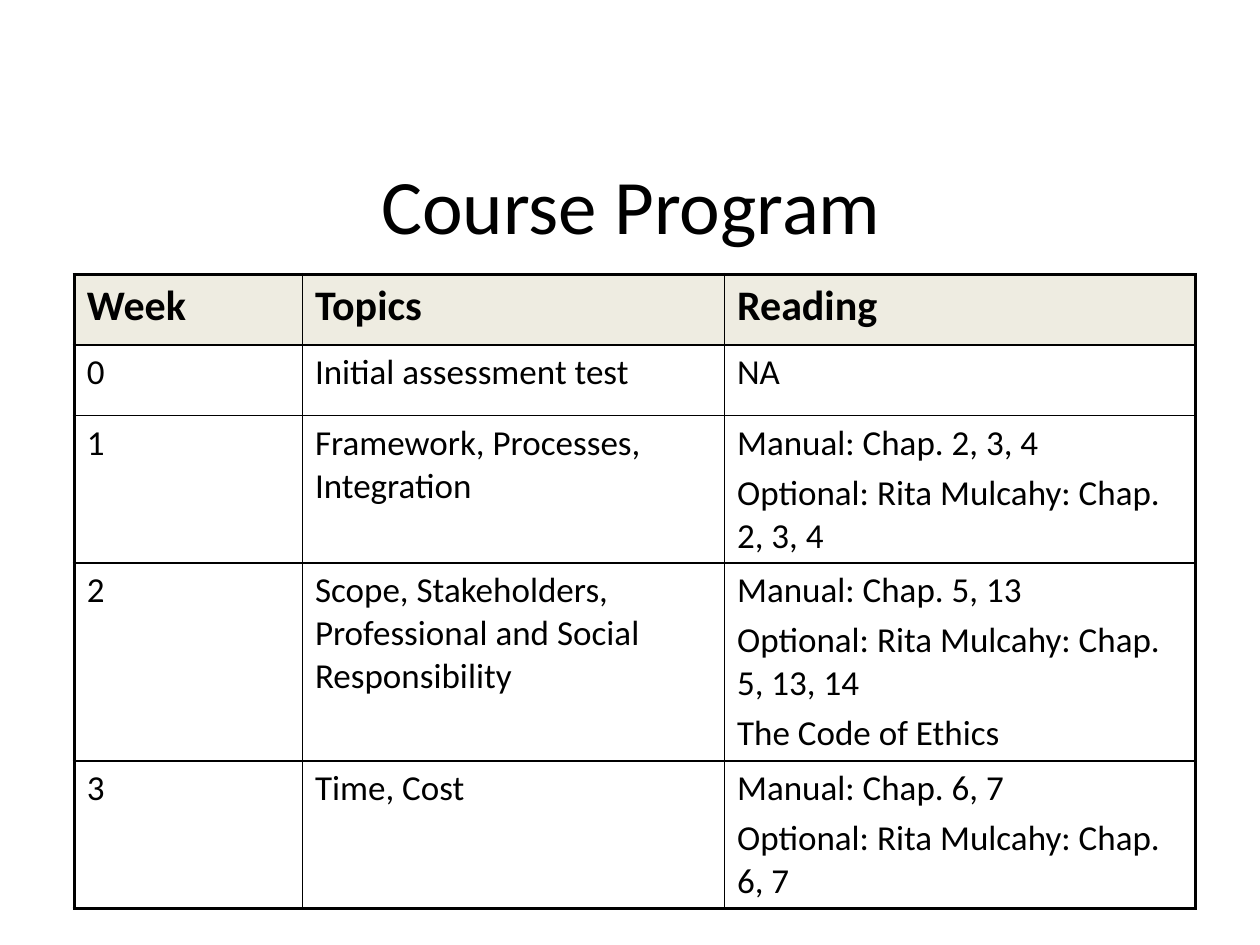
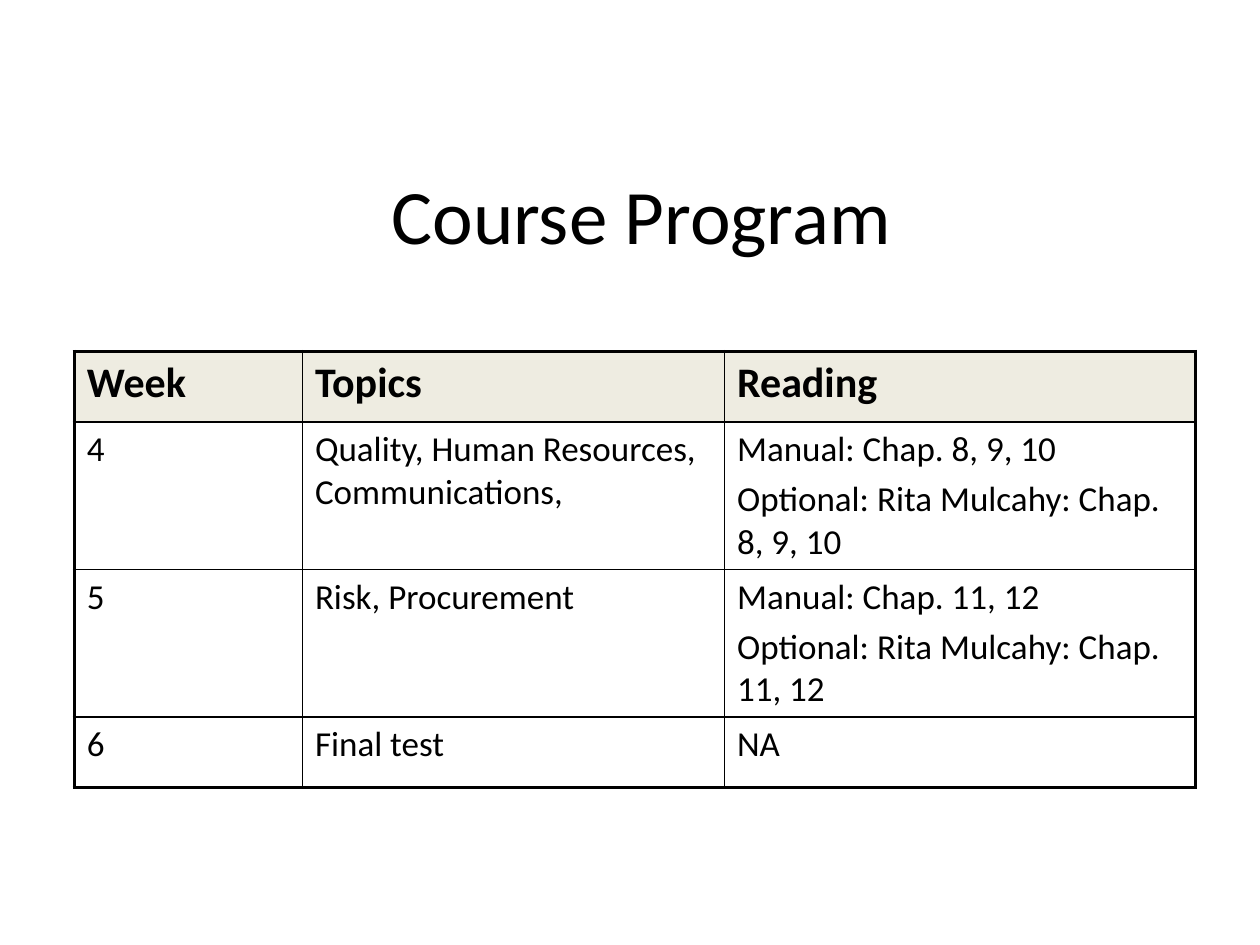
from dataclasses import dataclass

from lxml.etree import SubElement
from pptx import Presentation
from pptx.dml.color import RGBColor
from pptx.enum.text import MSO_ANCHOR as Anchor, PP_ALIGN as Align
from pptx.oxml.ns import qn
from pptx.presentation import Presentation as Deck
from pptx.slide import Slide
from pptx.table import _Cell as Cell
from pptx.text.text import _Paragraph as Paragraph
from pptx.util import Inches, Pt

FONT = "Calibri"
INK = "000000"
HEADER_FILL = "EEECE1"
THIN, THICK = 1, 2.25
TABLE_LEFT = 0.59
COLUMN_WIDTHS = (1.81, 3.35, 3.74)
HEADINGS = ("Week", "Topics", "Reading")
ROW_HEIGHTS = {1: 0.56, 2: 1.17, 3: 1.57}


@dataclass(frozen=True)
class Week:
    number: int
    topics: str
    readings: tuple[str, ...]


@dataclass(frozen=True)
class ProgramSlide:
    title_left: float
    title_top: float
    table_top: float
    weeks: tuple[Week, ...]


PROGRAM = (
    ProgramSlide(0.51, 0.99, 2.18, (
        Week(0, "Initial assessment test", ("NA",)),
        Week(1, "Framework, Processes, Integration",
             ("Manual: Chap. 2, 3, 4", "Optional: Rita Mulcahy: Chap. 2, 3, 4")),
        Week(2, "Scope, Stakeholders, Professional and Social Responsibility",
             ("Manual: Chap. 5, 13", "Optional: Rita Mulcahy: Chap. 5, 13, 14",
              "The Code of Ethics")),
        Week(3, "Time, Cost",
             ("Manual: Chap. 6, 7", "Optional: Rita Mulcahy: Chap. 6, 7")),
    )),
    ProgramSlide(0.59, 1.07, 2.79, (
        Week(4, "Quality, Human Resources, Communications,",
             ("Manual: Chap. 8, 9, 10", "Optional: Rita Mulcahy: Chap. 8, 9, 10")),
        Week(5, "Risk, Procurement",
             ("Manual: Chap. 11, 12", "Optional: Rita Mulcahy: Chap. 11, 12")),
        Week(6, "Final test", ("NA",)),
    )),
)


def color(value: str) -> RGBColor:
    return RGBColor.from_string(value)


def style(paragraph: Paragraph, size: float, bold: bool = False) -> None:
    font = paragraph.font
    font.name, font.size, font.bold = FONT, Pt(size), bold
    font.color.rgb = color(INK)


def add_title(slide: Slide, left: float, top: float) -> None:
    box = slide.shapes.add_textbox(Inches(left), Inches(top), Inches(9), Inches(1.25))
    frame = box.text_frame
    frame.word_wrap = True
    frame.vertical_anchor = Anchor.MIDDLE
    paragraph = frame.paragraphs[0]
    paragraph.text = "Course Program"
    paragraph.alignment = Align.CENTER
    style(paragraph, 44)


def set_borders(cell: Cell, widths: dict[str, float]) -> None:
    properties = cell._tc.get_or_add_tcPr()
    for index, (side, width) in enumerate(widths.items()):
        line = SubElement(properties, qn(f"a:ln{side}"), w=str(Pt(width)))
        fill = SubElement(line, qn("a:solidFill"))
        SubElement(fill, qn("a:srgbClr"), val=INK)
        properties.insert(index, line)


def fill_cell(cell: Cell, lines: tuple[str, ...], is_header: bool) -> None:
    if is_header:
        cell.fill.solid()
        cell.fill.fore_color.rgb = color(HEADER_FILL)
    else:
        cell.fill.background()
    size = 24 if is_header else 20
    cell.text = "\n".join(lines)
    for index, paragraph in enumerate(cell.text_frame.paragraphs):
        if index:
            paragraph.space_before = Pt(size * 0.2)
        style(paragraph, size, is_header)


def add_program_table(slide: Slide, top: float, weeks: tuple[Week, ...]) -> None:
    rows = [tuple((heading,) for heading in HEADINGS)]
    rows += [((str(week.number),), (week.topics,), week.readings) for week in weeks]
    heights = [ROW_HEIGHTS[len(row[-1])] for row in rows]
    table = slide.shapes.add_table(
        len(rows), len(HEADINGS), Inches(TABLE_LEFT), Inches(top),
        Inches(sum(COLUMN_WIDTHS)), Inches(sum(heights))).table
    table.first_row = table.horz_banding = False
    for column, width in zip(table.columns, COLUMN_WIDTHS):
        column.width = Inches(width)
    last_row, last_column = len(rows) - 1, len(HEADINGS) - 1
    for row_index, (row, height) in enumerate(zip(rows, heights)):
        table.rows[row_index].height = Inches(height)
        for column_index, lines in enumerate(row):
            cell = table.cell(row_index, column_index)
            fill_cell(cell, lines, row_index == 0)
            outer = {"L": column_index == 0, "R": column_index == last_column,
                     "T": row_index == 0, "B": row_index == last_row}
            set_borders(cell, {side: THICK if edge else THIN
                               for side, edge in outer.items()})


def add_program_slide(presentation: Deck, content: ProgramSlide) -> None:
    slide = presentation.slides.add_slide(presentation.slide_layouts[6])
    add_title(slide, content.title_left, content.title_top)
    add_program_table(slide, content.table_top, content.weeks)


def main() -> None:
    presentation = Presentation()
    presentation.slide_width, presentation.slide_height = Inches(10), Inches(7.5)
    for content in PROGRAM:
        add_program_slide(presentation, content)
    presentation.save("out.pptx")


if __name__ == "__main__":
    main()
